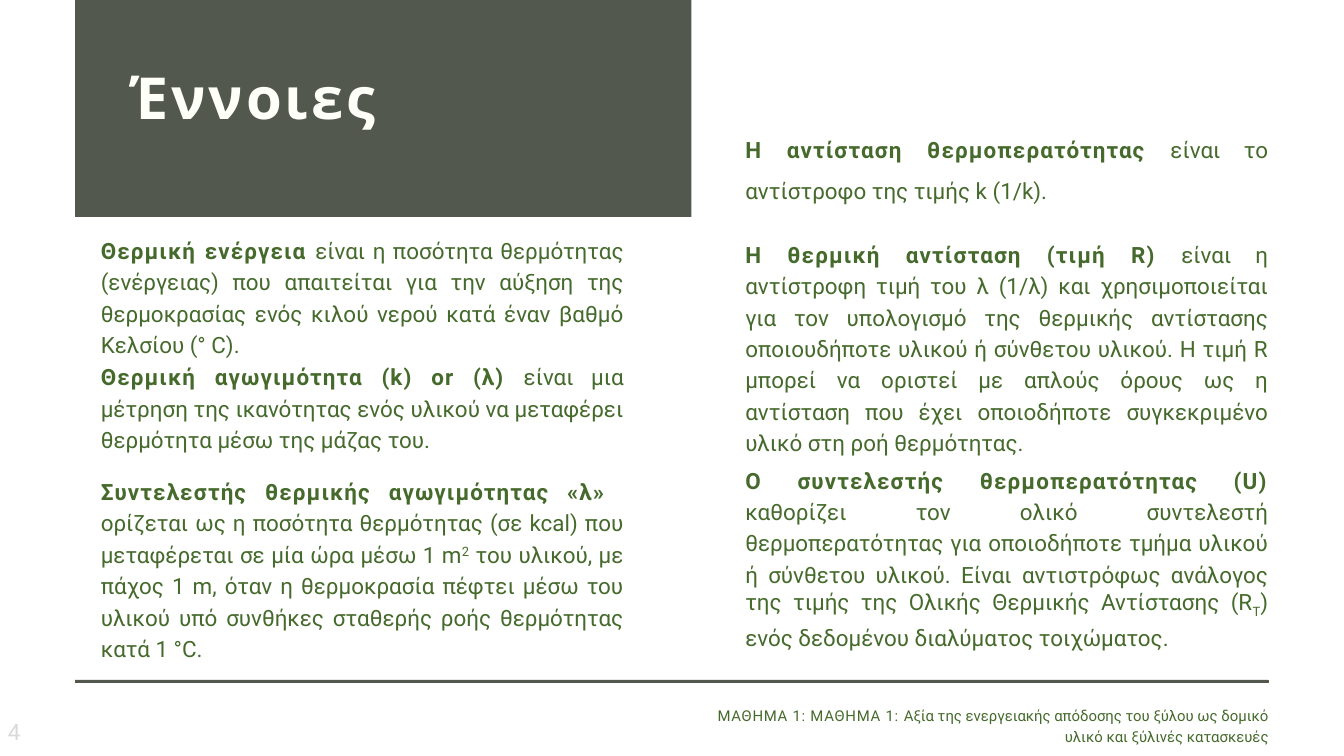
from pptx import Presentation
from pptx.dml.color import RGBColor
from pptx.enum.shapes import MSO_SHAPE as Preset
from pptx.enum.text import MSO_ANCHOR as Anchor, MSO_AUTO_SIZE as AutoSize, PP_ALIGN as Align
from pptx.util import Pt

COLORS = {"slate": "52584D", "green": "456A2C", "ivory": "FEFFF8", "grey": "D9D9D9"}

STYLES = {
    "term": {"size": Pt(24), "name": "Roboto", "bold": True, "color": "green", "spc": 120},
    "body": {"size": Pt(24), "name": "Roboto", "bold": False, "color": "green"},
    "super": {"size": Pt(24), "name": "Roboto", "color": "green", "baseline": 30000},
    "sub": {"size": Pt(24), "name": "Roboto", "color": "green", "baseline": -25000},
    "title": {"size": Pt(62), "name": "League Spartan", "bold": True, "color": "ivory", "spc": 310},
    "number": {"size": Pt(24), "name": "Roboto", "color": "grey", "spc": 120},
    "lesson": {"size": Pt(16), "name": "Roboto", "color": "green", "spc": 80},
    "topic": {"size": Pt(16), "name": "Roboto", "color": "green"},
}

prs = Presentation()
prs.slide_width, prs.slide_height = Pt(1440), Pt(810)
slide = prs.slides.add_slide(prs.slide_layouts[6])


def add_block(left, top, width, height):
    block = slide.shapes.add_shape(Preset.RECTANGLE, Pt(left), Pt(top), Pt(width), Pt(height))
    block.shadow.inherit = False
    block.fill.solid()
    block.fill.fore_color.rgb = RGBColor.from_string(COLORS["slate"])
    block.line.fill.background()
    return block


def write(holder, runs, paragraph_format, frame_format):
    frame = holder.text_frame
    frame_values = {"word_wrap": True, "auto_size": AutoSize.SHAPE_TO_FIT_TEXT,
                    "margin_left": 0, "margin_top": 0, "margin_right": 0, "margin_bottom": 0}
    for key, value in {**frame_values, **frame_format}.items():
        setattr(frame, key, value)
    paragraph = frame.paragraphs[0]
    for key, value in paragraph_format.items():
        setattr(paragraph, key, value)
    for style, words in runs:
        run = paragraph.add_run()
        run.text = words
        for key, value in STYLES[style].items():
            if key == "color":
                run.font.color.rgb = RGBColor.from_string(COLORS[value])
            elif key in ("spc", "baseline"):
                run._r.get_or_add_rPr().set(key, str(value))
            else:
                setattr(run.font, key, value)


justified = {"alignment": Align.JUSTIFY, "line_spacing": Pt(33.6)}
airy = {"alignment": Align.JUSTIFY, "line_spacing": 1.5, "space_after": Pt(6)}
left_column, right_column, column_width = 108, 798.5, 560.2

definitions = [
    (right_column, 131.8, 136.8, airy, [
        ("term", "Η αντίσταση θερμοπερατότητας "),
        ("body", "είναι το αντίστροφο της τιμής k (1/k).")]),
    (right_column, 253.4, 237.6, justified, [
        ("term", "Η θερμική αντίσταση (τιμή R) "),
        ("body", "είναι η αντίστροφη τιμή του λ (1/λ) και χρησιμοποιείται για τον υπολογισμό "
                 "της θερμικής αντίστασης οποιουδήποτε υλικού ή σύνθετου υλικού. Η τιμή R μπορεί "
                 "να οριστεί με απλούς όρους ως η αντίσταση που έχει οποιοδήποτε συγκεκριμένο "
                 "υλικό στη ροή θερμότητας. ")]),
    (right_column, 495.4, 203, justified, [
        ("term", "Ο συντελεστής θερμοπερατότητας (U) "),
        ("body", "καθορίζει τον ολικό συντελεστή θερμοπερατότητας για οποιοδήποτε τμήμα υλικού "
                 "ή σύνθετου υλικού. Είναι αντιστρόφως ανάλογος της τιμής της Ολικής Θερμικής "
                 "Αντίστασης (R"),
        ("sub", "T"),
        ("body", ") ενός δεδομένου διαλύματος τοιχώματος.")]),
    (left_column, 249.1, 137.5, justified, [
        ("term", "Θερμική ενέργεια "),
        ("body", "είναι η ποσότητα θερμότητας (ενέργειας) που απαιτείται για την αύξηση της "
                 "θερμοκρασίας ενός κιλού νερού κατά έναν βαθμό Κελσίου (° C). ")]),
    (left_column, 384.5, 103, justified, [
        ("term", "Θερμική αγωγιμότητα (k) or (λ) "),
        ("body", "είναι μια μέτρηση της ικανότητας ενός υλικού να μεταφέρει θερμότητα μέσω "
                 "της μάζας του.")]),
    (left_column, 507.6, 206, justified, [
        ("term", "Συντελεστής θερμικής αγωγιμότητας «λ»  "),
        ("body", "ορίζεται ως η ποσότητα θερμότητας (σε kcal) που μεταφέρεται σε μία ώρα μέσω 1 m"),
        ("super", "2"),
        ("body", " του υλικού, με πάχος 1 m, όταν η θερμοκρασία πέφτει μέσω του υλικού υπό "
                 "συνθήκες σταθερής ροής θερμότητας κατά 1 °C.")]),
]
for left, top, height, paragraph_format, runs in definitions:
    definition = slide.shapes.add_textbox(Pt(left), Pt(top), Pt(column_width), Pt(height))
    write(definition, runs, paragraph_format, {})

add_block(80.6, -24.5, 660.2, 257)
heading = add_block(139, 56.9, 544.3, 85)
write(heading, [("title", "Έννοιες")],
      {"alignment": Align.LEFT, "line_spacing": Pt(83.7)}, {"vertical_anchor": Anchor.TOP})

footer_rule = add_block(80.6, 728.6, 1278, 2.9)
footer_rule.line.color.rgb = RGBColor.from_string(COLORS["slate"])
footer_rule.line.width = Pt(0.75)

page_number = slide.shapes.add_textbox(Pt(1.4), Pt(769.7), Pt(167.8), Pt(28.8))
write(page_number, [("number", "4")], {},
      {"vertical_anchor": Anchor.MIDDLE, "auto_size": AutoSize.NONE,
       "margin_left": Pt(7.2), "margin_right": Pt(7.2),
       "margin_top": Pt(3.6), "margin_bottom": Pt(3.6)})

footer = slide.shapes.add_textbox(Pt(760.3), Pt(753.8), Pt(599), Pt(44.8))
write(footer, [
    ("lesson", "ΜΑΘΗΜΑ 1: ΜΑΘΗΜΑ 1: "),
    ("topic", "Αξία της ενεργειακής απόδοσης του ξύλου ως δομικό υλικό και ξύλινές κατασκευές"),
], {"alignment": Align.RIGHT, "line_spacing": Pt(22.4)}, {})

prs.save("out.pptx")
